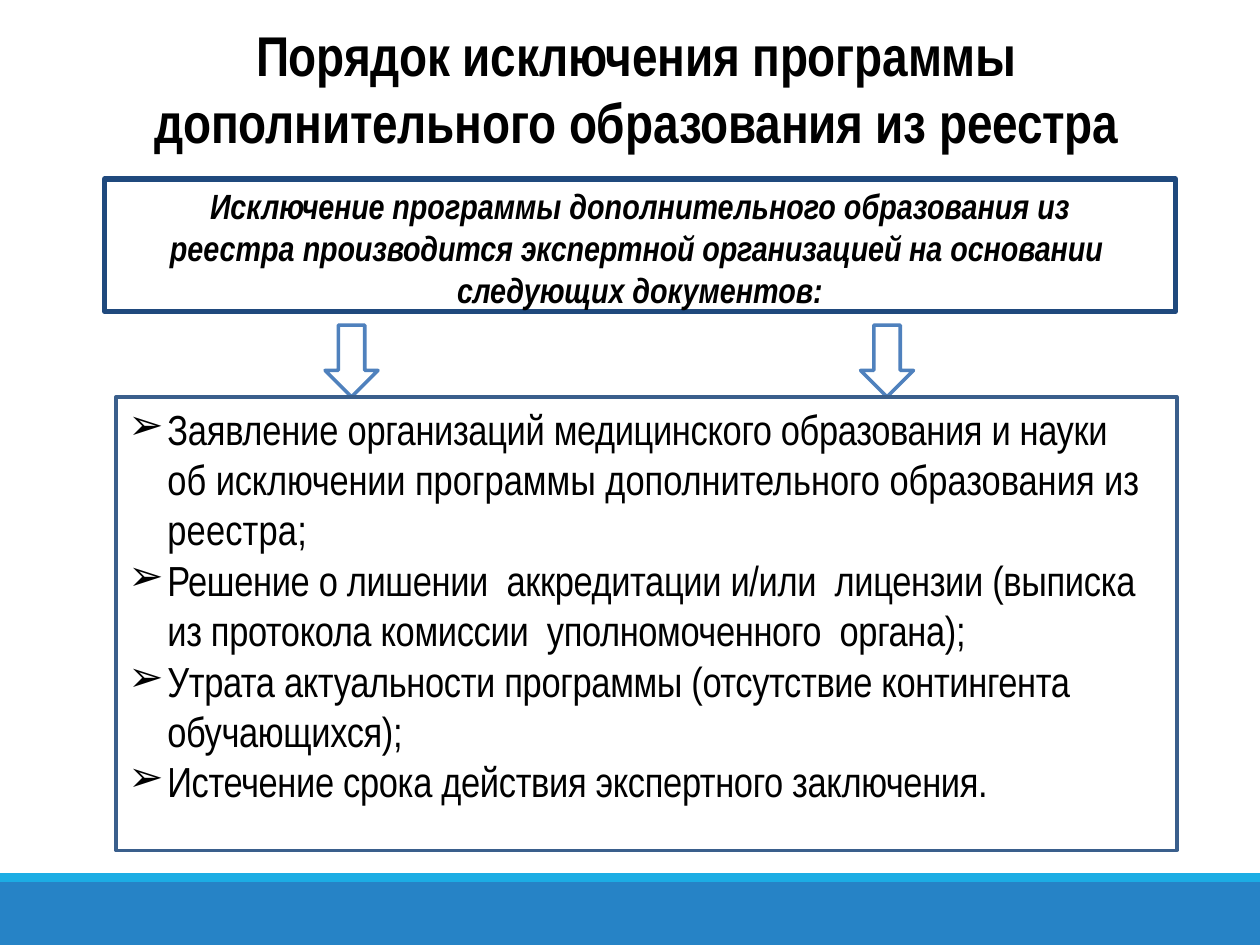
import pptx
import pptx.util
import pptx.dml.color
import pptx.enum.shapes
import pptx.enum.text
import pptx.oxml
import pptx.oxml.ns

Inches, Pt = pptx.util.Inches, pptx.util.Pt
SHAPE = pptx.enum.shapes.MSO_SHAPE
ALIGN = pptx.enum.text.PP_ALIGN


def rgb(value):
    return pptx.dml.color.RGBColor.from_string(value)


class SlideBuilder:
    font = "Arial Narrow"
    ink = "000000"

    def __init__(self, slide):
        self.slide = slide

    def frame(self, sp, insets):
        tf = sp.text_frame
        tf.word_wrap = True
        tf.vertical_anchor = pptx.enum.text.MSO_ANCHOR.TOP
        (tf.margin_left, tf.margin_top,
         tf.margin_right, tf.margin_bottom) = [Inches(v) for v in insets]
        return tf

    def paragraph(self, p, runs, size, align, bold=False, italic=False):
        """Runs are (text, letter spacing in points) pairs."""
        p.alignment = align
        p.font.name, p.font.size = self.font, Pt(size)
        p.font.bold, p.font.italic = bold, italic
        p.font.color.rgb = rgb(self.ink)
        for text, spacing in runs:
            r = p.add_run()
            r.text = text
            r.font._element.set("spc", str(round(spacing * 100)))

    def indent(self, p, left, first=0, right=0, bullet=None):
        pPr = p._p.get_or_add_pPr()
        for name, value in (("marL", left), ("marR", right), ("indent", first)):
            pPr.set(name, str(Inches(value)))
        if bullet:
            ns = pptx.oxml.ns.nsdecls("a")
            for xml in (f'<a:buFont {ns} typeface="{self.font}"/>',
                        f'<a:buChar {ns} char="{bullet}"/>'):
                pPr.insert_element_before(pptx.oxml.parse_xml(xml),
                                          "a:tabLst", "a:defRPr", "a:extLst")

    def title(self, runs, x, y, w, h):
        sp = self.slide.shapes.title
        sp.left, sp.top, sp.width, sp.height = [Inches(v) for v in (x, y, w, h)]
        tf = self.frame(sp, (0, 0.08, 0, 0))
        tf.auto_size = pptx.enum.text.MSO_AUTO_SIZE.NONE
        self.paragraph(tf.paragraphs[0], runs, 32, ALIGN.CENTER, bold=True)

    def shape(self, kind, x, y, w, h, fill=None, line=None, weight=2):
        sp = self.slide.shapes.add_shape(kind, *[Inches(v) for v in (x, y, w, h)])
        sp.shadow.inherit = False
        if fill:
            sp.fill.solid()
            sp.fill.fore_color.rgb = rgb(fill)
        else:
            sp.fill.background()
        if line:
            sp.line.color.rgb = rgb(line)
            sp.line.width = Pt(weight)
        else:
            sp.line.fill.background()
        return sp

    def callout(self, runs, x, y, w, h):
        sp = self.shape(SHAPE.RECTANGLE, x, y, w, h, line="1F497D", weight=3)
        p = self.frame(sp, (0, 0.04, 0, 0)).paragraphs[0]
        self.paragraph(p, runs, 20, ALIGN.CENTER, bold=True, italic=True)
        p.space_before = Pt(3)
        self.indent(p, 0.4, right=0.4)

    def bullet_box(self, items, x, y, w, h):
        sp = self.shape(SHAPE.RECTANGLE, x, y, w, h, fill="FFFFFF", line="3A5F8C")
        tf = self.frame(sp, (0.1, 0.05, 0.1, 0.05))
        for i, runs in enumerate(items):
            p = tf.add_paragraph() if i else tf.paragraphs[0]
            self.paragraph(p, runs, 24, ALIGN.LEFT)
            self.indent(p, 0.31, first=-0.31, right=0.13, bullet="➢")


TITLE = [("Порядок исключения программы дополнительного образования из реестра", -0.1)]
INTRO = [
    ("Исключение ", -0.1),
    ("программы дополнительного образования из реестра ", 0),
    ("производится экспертной организацией ", -0.1),
    ("на ", 0),
    ("основании  следующих ", -0.1),
    ("документов:", 0),
]
DOCUMENTS = [
    [
        ("Заявление ", -0.1),
        ("организаций медицинского образования и науки ", -0.2),
        ("об ", 0),
        ("исключении ", -0.1),
        ("программы дополнительного образования ", 0),
        ("из ", -0.1),
        ("реестра;", 0.1),
    ],
    [("Решение о лишении  аккредитации и/или  лицензии (выписка из протокола "
      "комиссии  уполномоченного  органа);", -0.2)],
    [("Утрата актуальности программы (отсутствие контингента обучающихся);", -0.2)],
    [("Истечение срока действия экспертного заключения.", -0.2)],
]


def main():
    prs = pptx.Presentation()
    prs.slide_width, prs.slide_height = Inches(10), Inches(7.5)
    s = SlideBuilder(prs.slides.add_slide(prs.slide_layouts[5]))

    # Footer bands
    s.shape(SHAPE.RECTANGLE, 0, 7, 10, 0.5, fill="2683C6")
    s.shape(SHAPE.RECTANGLE, 0, 6.93, 10, 0.07, fill="1CADE4")

    # Heading and introduction
    s.title(TITLE, 0.5, 0.08, 9.1, 1.15)
    s.callout(INTRO, 0.83, 1.42, 8.5, 1.05)

    # Arrows down to the list of documents
    for x in (2.58, 6.83):
        s.shape(SHAPE.DOWN_ARROW, x, 2.58, 0.42, 0.57, fill="FFFFFF", line="4F81BD")
    s.bullet_box(DOCUMENTS, 0.92, 3.15, 8.42, 3.6)

    prs.save("out.pptx")


if __name__ == "__main__":
    main()
